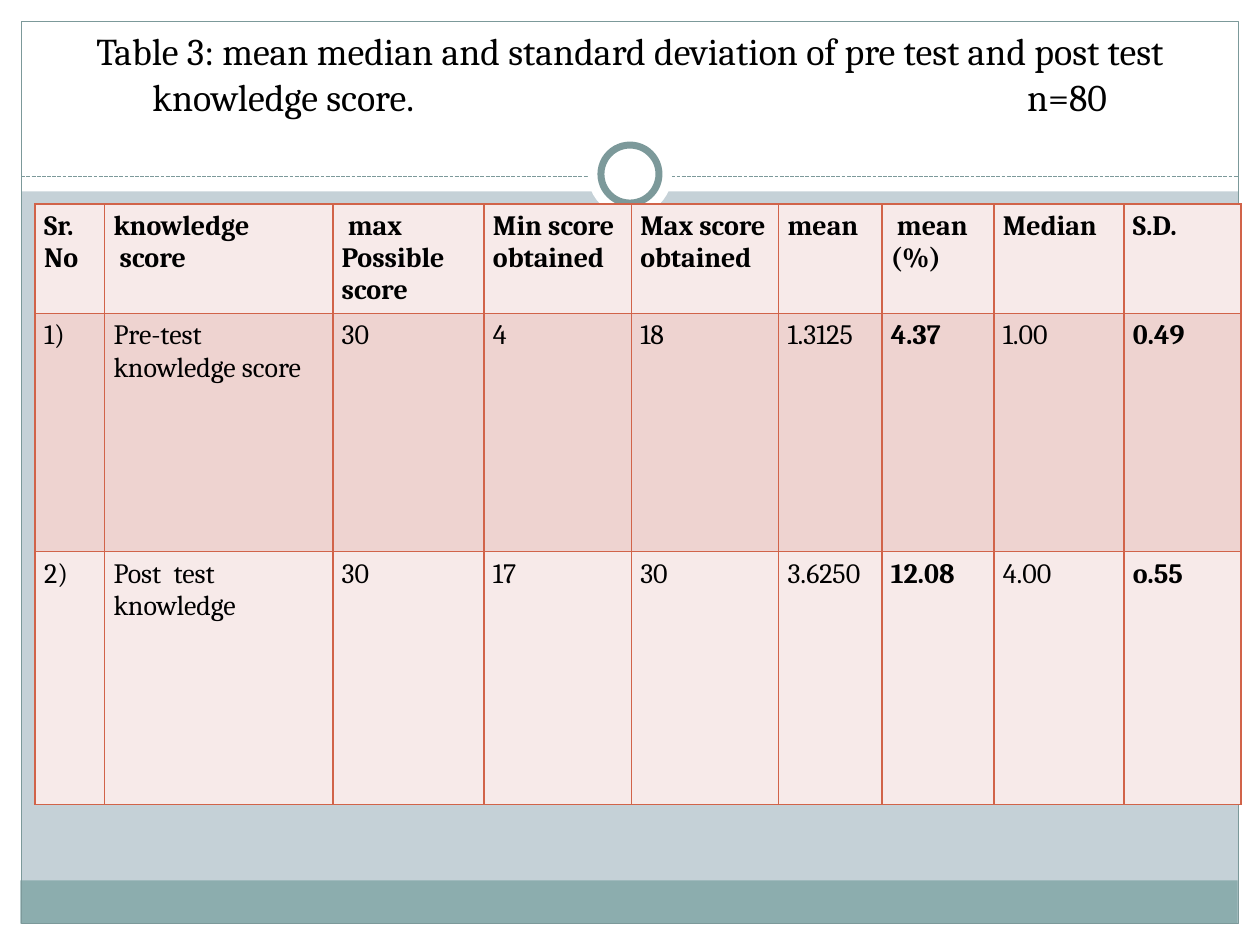
from lxml import etree
from pptx import Presentation
from pptx import util as u
from pptx.dml.color import RGBColor
from pptx.enum import dml, shapes, text
from pptx.oxml import ns

FONT = "Cambria"
TEAL = "7C999A"
WHITE = "FFFFFF"


def color(hex_string):
    return RGBColor.from_string(hex_string)


def add_child(parent, tag, **attributes):
    return etree.SubElement(parent, ns.qn(tag), attributes)


presentation = Presentation()
presentation.slide_width = u.Cm(25.4)
presentation.slide_height = u.Cm(19.05)
slide = presentation.slides.add_slide(presentation.slide_layouts[5])
slide.background.fill.solid()
slide.background.fill.fore_color.rgb = color("C5D1D7")

# White margins, footer band and frame: left, top, width, height, fill, line
for left, top, width, height, fill, line in [
    (0, 18.62, 25.4, 0.43, WHITE, None),
    (0, 0, 25.4, 3.86, WHITE, None),
    (0, 0, 0.43, 19.05, WHITE, None),
    (24.97, 0, 0.43, 19.05, WHITE, None),
    (0.41, 17.75, 24.54, 0.87, "8CADAE", None),
    (0.43, 0.43, 24.54, 18.19, None, TEAL),
]:
    shape = slide.shapes.add_shape(
        shapes.MSO_SHAPE.RECTANGLE, u.Cm(left), u.Cm(top), u.Cm(width), u.Cm(height))
    shape.shadow.inherit = False
    if fill:
        shape.fill.solid()
        shape.fill.fore_color.rgb = color(fill)
    else:
        shape.fill.background()
    if line:
        shape.line.color.rgb = color(line)
        shape.line.width = u.Pt(0.75)
    else:
        shape.line.fill.background()

divider = slide.shapes.add_connector(
    shapes.MSO_CONNECTOR.STRAIGHT, u.Cm(0.43), u.Cm(3.56), u.Cm(24.97), u.Cm(3.56))
divider.line.color.rgb = color(TEAL)
divider.line.width = u.Pt(0.75)
divider.line.dash_style = dml.MSO_LINE.SQUARE_DOT
add_child(divider._element.spPr, "a:effectLst")

# Ring centred on the divider: diameter, outline width
for diameter, outline in [(1.7, 0), (1.17, 4)]:
    ring = slide.shapes.add_shape(
        shapes.MSO_SHAPE.OVAL, u.Cm(12.7 - diameter / 2), u.Cm(3.51 - diameter / 2),
        u.Cm(diameter), u.Cm(diameter))
    ring.shadow.inherit = False
    ring.fill.solid()
    ring.fill.fore_color.rgb = color(WHITE)
    if outline:
        ring.line.color.rgb = color(TEAL)
        ring.line.width = u.Pt(outline)
    else:
        ring.line.fill.background()

# Title, brought in front of the white header
title = slide.shapes.title
slide.shapes._spTree.append(title._element)
title.left, title.top = u.Cm(0), u.Cm(-0.48)
title.width, title.height = u.Cm(25.4), u.Cm(3)
title.text_frame.text = (
    "Table 3: mean median and standard deviation of pre test and post test\n"
    "\tknowledge score.\tn=80")
title.text_frame.auto_size = text.MSO_AUTO_SIZE.NONE
title.text_frame.vertical_anchor = text.MSO_ANCHOR.BOTTOM
for paragraph, alignment in zip(
        title.text_frame.paragraphs, [text.PP_ALIGN.CENTER, text.PP_ALIGN.LEFT]):
    paragraph.alignment = alignment
    paragraph.space_before = u.Pt(0)
    for run in paragraph.runs:
        run.font.name = FONT
        run.font.size = u.Pt(21.6)
        run.font.color.rgb = color("000000")
tab_list = add_child(paragraph._p.get_or_add_pPr(), "a:tabLst")
for position in (2.82, 20.45):
    add_child(tab_list, "a:tab", pos=str(u.Cm(position)), algn="l")

# Score table
rows = [
    ["Sr.\nNo", "knowledge\n score", " max\nPossible score", "Min score obtained",
     "Max score obtained", "mean", " mean\n(%)", "Median", "S.D."],
    ["1)", "Pre-test knowledge score", "30", "4", "18", "1.3125", "4.37", "1.00", "0.49"],
    ["2)", "Post  test knowledge", "30", "17", "30", "3.6250", "12.08", "4.00", "o.55"],
]
column_widths = [1.4, 4.6, 3.05, 2.97, 2.97, 2.08, 2.26, 2.62, 2.36]
row_heights = [2.2, 4.8, 5.1]
row_fills = ["F7EAE9", "EED3D0", "F7EAE9"]
bold_columns = (6, 8)

table = slide.shapes.add_table(
    len(rows), len(column_widths), u.Cm(0.71), u.Cm(4.11),
    u.Cm(sum(column_widths)), u.Cm(sum(row_heights))).table
for column, width in zip(table.columns, column_widths):
    column.width = u.Cm(width)
for row_index, values in enumerate(rows):
    table.rows[row_index].height = u.Cm(row_heights[row_index])
    for column_index, value in enumerate(values):
        cell = table.cell(row_index, column_index)
        cell.margin_left = cell.margin_right = u.Cm(0.18)
        cell.margin_top = cell.margin_bottom = u.Cm(0.13)
        cell.text_frame.text = value
        for paragraph in cell.text_frame.paragraphs:
            for run in paragraph.runs:
                run.font.name = FONT
                run.font.size = u.Pt(16)
                run.font.bold = row_index == 0 or column_index in bold_columns
                run.font.color.rgb = color("000000")
        properties = cell._tc.get_or_add_tcPr()
        for side in ("a:lnL", "a:lnR", "a:lnT", "a:lnB"):
            border = add_child(properties, side, w=str(u.Pt(1)))
            add_child(add_child(border, "a:solidFill"), "a:srgbClr", val="D16349")
        cell.fill.solid()
        cell.fill.fore_color.rgb = color(row_fills[row_index])

presentation.save("out.pptx")
